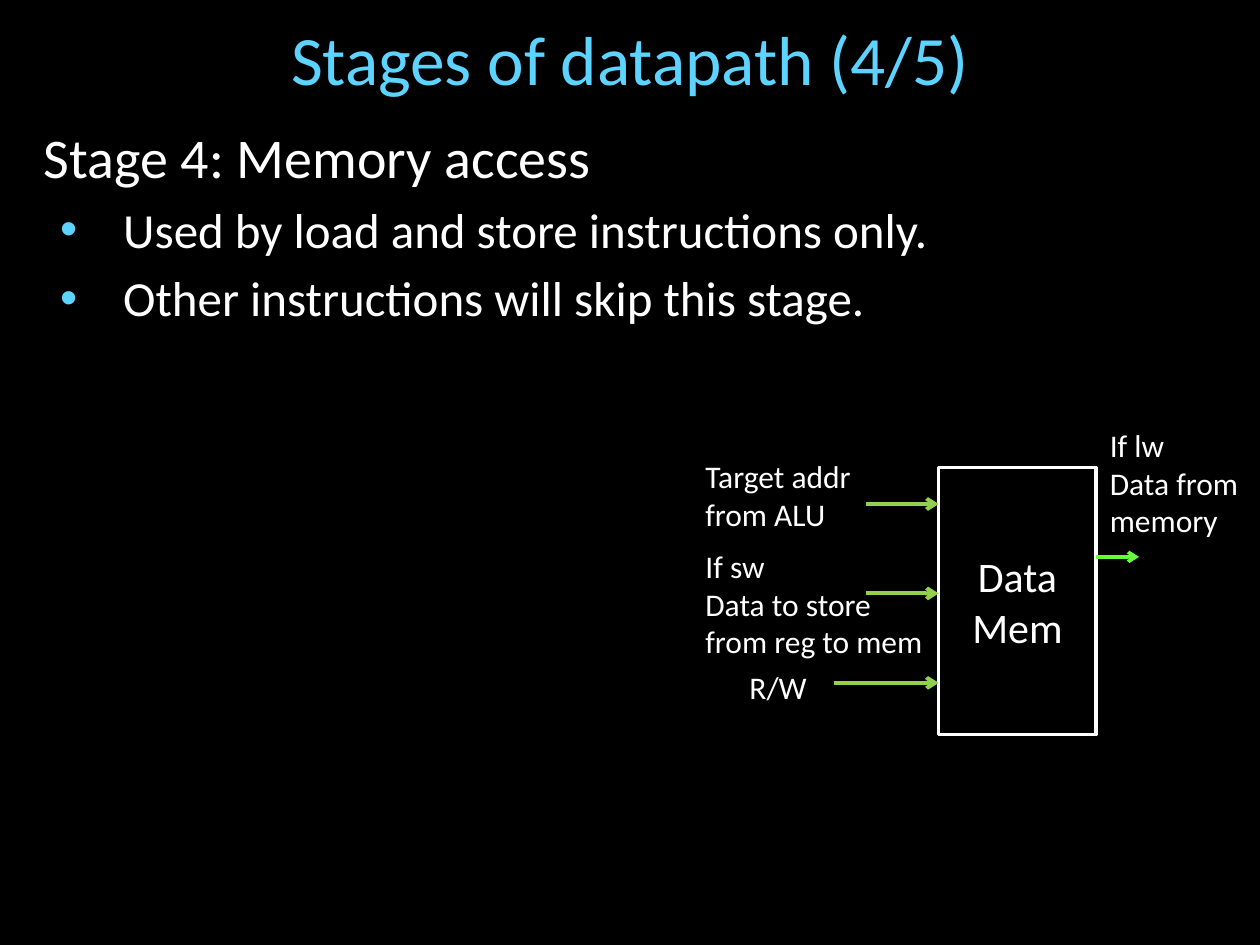
"""Build the slide on the memory access stage of a datapath."""
from dataclasses import dataclass

from lxml import etree
from pptx import Presentation
from pptx.dml.color import RGBColor
from pptx.enum import shapes, text
from pptx.oxml import ns
from pptx.util import Inches, Pt

COLOURS = {
    "background": "000000",
    "heading": "5DD4FF",
    "body": "FFFFFF",
    "input": "92D050",
    "output": "66FF33",
}
FRAME_FORMAT = {
    "margin_left": Inches(0.1),
    "margin_right": Inches(0.1),
    "margin_top": Inches(0.05),
    "margin_bottom": Inches(0.05),
}
MEMORY_LEFT, MEMORY_TOP, MEMORY_WIDTH, MEMORY_HEIGHT = 7.45, 3.71, 1.25, 2.12


@dataclass(frozen=True)
class Line:
    words: str
    size: float = 18
    colour: str = "body"
    centred: bool = False
    before: float = 0
    bullet: bool = False


@dataclass(frozen=True)
class Label:
    left: float
    top: float
    width: float
    height: float
    lines: tuple[str, ...]


@dataclass(frozen=True)
class Signal:
    start: float
    end: float
    height: float
    colour: str = "input"
    weight: float = 2.25


LABELS = (
    Label(5.5, 4.29, 1.95, 1.01, ("If sw", "Data to store", "from reg to mem")),
    Label(5.85, 5.25, 0.66, 0.4, ("R/W",)),
    Label(8.71, 3.33, 1.29, 1.01, ("If lw", "Data from", "memory")),
    Label(5.5, 3.58, 1.37, 0.71, ("Target addr", "from ALU")),
)
SIGNALS = (
    Signal(6.87, MEMORY_LEFT, 4),
    Signal(6.87, MEMORY_LEFT, 4.71),
    Signal(6.62, MEMORY_LEFT, 5.42),
    Signal(MEMORY_LEFT + MEMORY_WIDTH, 9.04, 4.42, "output", 2),
)


def rgb(key: str) -> RGBColor:
    """Look up a named colour."""
    return RGBColor.from_string(COLOURS[key])


def add_bullet(paragraph) -> None:
    """Give a paragraph a coloured bullet with a hanging indent."""
    paragraph.level = 1
    properties = paragraph._p.get_or_add_pPr()
    properties.set("marL", str(Inches(0.63)))
    properties.set("indent", str(Inches(-0.5)))
    tint = etree.SubElement(properties, ns.qn("a:buClr"))
    etree.SubElement(tint, ns.qn("a:srgbClr"), val=COLOURS["heading"])
    etree.SubElement(properties, ns.qn("a:buFont"), typeface="Arial")
    etree.SubElement(properties, ns.qn("a:buChar"), char="•")


def write(frame, lines: list[Line], **formats) -> None:
    """Format a text frame and fill it with one paragraph for each line."""
    for name, value in (FRAME_FORMAT | formats).items():
        setattr(frame, name, value)
    for index, line in enumerate(lines):
        paragraph = frame.paragraphs[0] if index == 0 else frame.add_paragraph()
        paragraph.alignment = text.PP_ALIGN.CENTER if line.centred else text.PP_ALIGN.LEFT
        paragraph.space_before = Pt(line.before)
        if line.bullet:
            add_bullet(paragraph)
        run = paragraph.add_run()
        run.text = line.words
        for name, value in {"name": "Calibri", "size": Pt(line.size)}.items():
            setattr(run.font, name, value)
        run.font.color.rgb = rgb(line.colour)


def add_text(slide, left: float, top: float, width: float, height: float,
             lines: list[Line], **formats) -> None:
    """Place a text box."""
    box = slide.shapes.add_textbox(*map(Inches, (left, top, width, height)))
    write(box.text_frame, lines, **formats)


def add_memory(slide) -> None:
    """Draw the data memory block."""
    memory = slide.shapes.add_shape(
        shapes.MSO_SHAPE.RECTANGLE,
        *map(Inches, (MEMORY_LEFT, MEMORY_TOP, MEMORY_WIDTH, MEMORY_HEIGHT)))
    memory.shadow.inherit = False
    memory.fill.background()
    memory.line.color.rgb = rgb("body")
    memory.line.width = Pt(2)
    write(memory.text_frame,
          [Line(word, 24, centred=True) for word in ("Data", "Mem")],
          vertical_anchor=text.MSO_ANCHOR.MIDDLE, word_wrap=True)


def add_signal(slide, signal: Signal) -> None:
    """Draw a horizontal arrow."""
    arrow = slide.shapes.add_connector(
        shapes.MSO_CONNECTOR.STRAIGHT,
        *map(Inches, (signal.start, signal.height, signal.end, signal.height)))
    arrow.line.color.rgb = rgb(signal.colour)
    arrow.line.width = Pt(signal.weight)
    etree.SubElement(arrow.line._get_or_add_ln(), ns.qn("a:tailEnd"), type="arrow")
    etree.SubElement(arrow._element.spPr, ns.qn("a:effectLst"))


def main() -> None:
    """Build and save the slide."""
    deck = Presentation()
    deck.slide_width, deck.slide_height = Inches(10), Inches(7.5)
    slide = deck.slides.add_slide(deck.slide_layouts[6])
    slide.background.fill.solid()
    slide.background.fill.fore_color.rgb = rgb("background")

    add_text(slide, 0.25, 0.17, 9.5, 0.58,
             [Line("Stages of datapath (4/5)", 39.6, "heading", centred=True)],
             vertical_anchor=text.MSO_ANCHOR.MIDDLE, word_wrap=True)
    add_text(slide, 0.25, 0.92, 9.5, 6.17, [
        Line("Stage 4: Memory access", 32, before=6.4),
        Line("Used by load and store instructions only.", 28, before=5.6, bullet=True),
        Line("Other instructions will skip this stage.", 28, before=5.6, bullet=True),
    ], word_wrap=True)

    add_memory(slide)
    for signal in SIGNALS:
        add_signal(slide, signal)
    for label in LABELS:
        add_text(slide, label.left, label.top, label.width, label.height,
                 [Line(words) for words in label.lines],
                 word_wrap=False, auto_size=text.MSO_AUTO_SIZE.SHAPE_TO_FIT_TEXT)
    deck.save("out.pptx")


if __name__ == "__main__":
    main()
